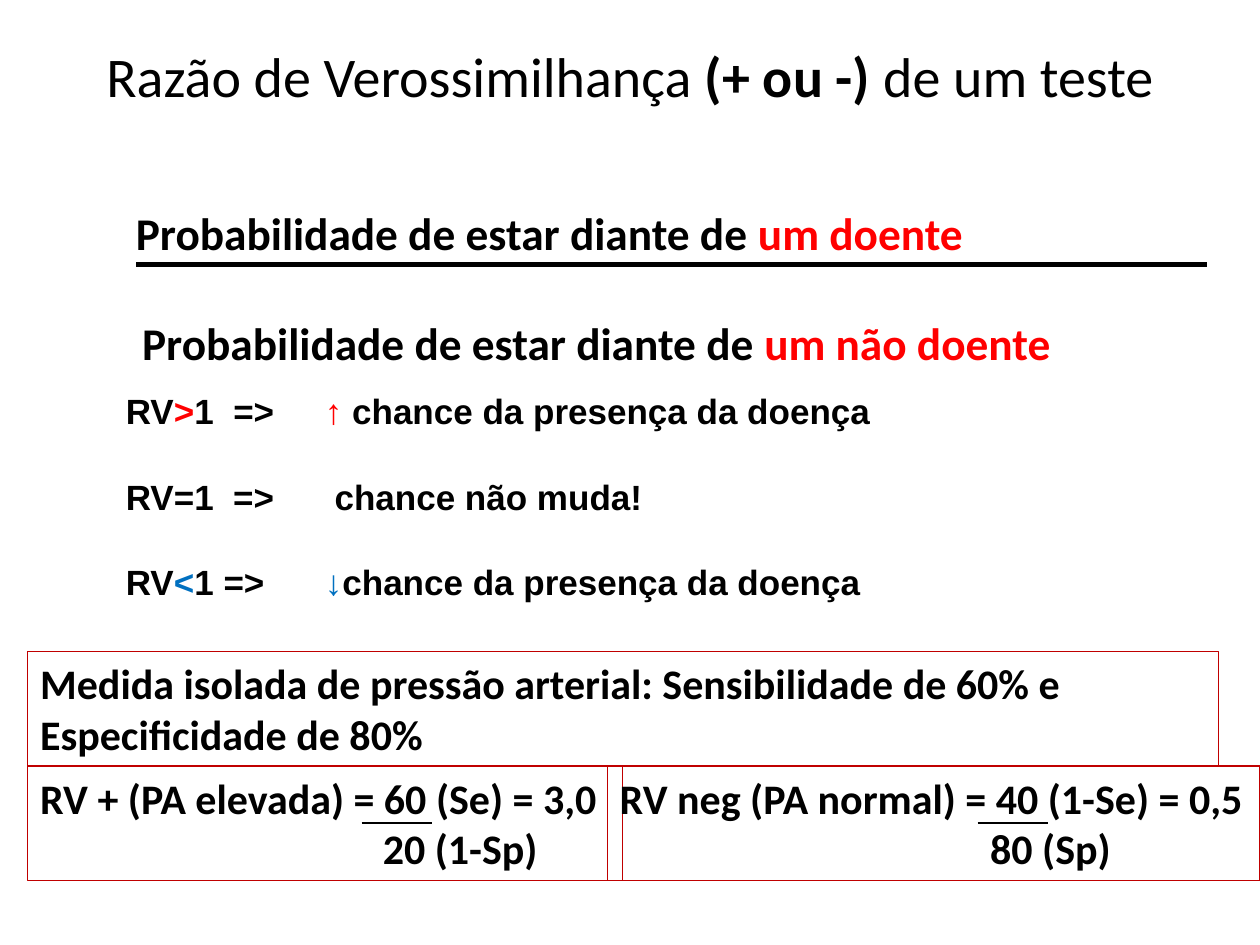
from lxml.etree import SubElement
from pptx import Presentation
from pptx.dml.color import RGBColor
from pptx.enum.shapes import MSO_CONNECTOR, MSO_SHAPE
from pptx.enum.text import MSO_ANCHOR, PP_ALIGN
from pptx.oxml.ns import qn
from pptx.util import Inches, Pt

BLACK = RGBColor(0x00, 0x00, 0x00)
RED = RGBColor(0xFF, 0x00, 0x00)
BLUE = RGBColor(0x00, 0x70, 0xC0)
DARK_RED = RGBColor(0xC0, 0x00, 0x00)

RATIO = {"name": "Calibri", "size": Pt(25.9), "bold": True}
RULE = {"name": "Arial", "size": Pt(20), "bold": True}
EXAMPLE = {"name": "Calibri", "size": Pt(24), "bold": True}


def add_runs(paragraph, runs, font_format):
    """Add (text, colour) pairs that share one font format."""
    for text, colour in runs:
        run = paragraph.add_run()
        run.text = text
        for attribute, value in font_format.items():
            setattr(run.font, attribute, value)
        run.font.color.rgb = colour


def add_text(slide, left, top, width, height):
    frame = slide.shapes.add_textbox(
        Inches(left), Inches(top), Inches(width), Inches(height)).text_frame
    frame.word_wrap = True
    return frame


def add_rule_line(slide, left, y, width, weight):
    line = slide.shapes.add_connector(
        MSO_CONNECTOR.STRAIGHT, Inches(left), Inches(y), Inches(left + width), Inches(y))
    line.line.color.rgb = BLACK
    line.line.width = Pt(weight)
    SubElement(line._element.spPr, qn("a:effectLst"))


def add_framed_box(slide, left, top, width, height):
    box = slide.shapes.add_shape(
        MSO_SHAPE.RECTANGLE, Inches(left), Inches(top), Inches(width), Inches(height))
    box.shadow.inherit = False
    box.fill.background()
    box.line.color.rgb = DARK_RED
    box.line.width = Pt(0.75)
    frame = box.text_frame
    frame.word_wrap = True
    frame.vertical_anchor = MSO_ANCHOR.TOP
    frame.paragraphs[0].alignment = PP_ALIGN.LEFT
    return frame


def place_title(slide, left, top, width, height):
    title = slide.shapes.title
    title.left, title.top = Inches(left), Inches(top)
    title.width, title.height = Inches(width), Inches(height)
    title.text_frame.vertical_anchor = MSO_ANCHOR.MIDDLE
    paragraph = title.text_frame.paragraphs[0]
    paragraph.alignment = PP_ALIGN.CENTER
    for text, bold in (("Razão de Verossimilhança ", False),
                       ("(+ ou -) ", True), ("de um teste", False)):
        add_runs(paragraph, [(text, BLACK)],
                 {"name": "Calibri", "size": Pt(32), "bold": bold})


def add_likelihood_ratio(slide, left, top, width):
    """Numerator and denominator in words, with the fraction bar between."""
    terms = ((-0.1, 0, "um doente"), (-0.05, 0.87, "um não doente"))
    for shift, drop, condition in terms:
        frame = add_text(slide, left + shift, top + drop, width, 0.54)
        add_runs(frame.paragraphs[0],
                 [("Probabilidade de estar diante de ", BLACK), (condition, RED)], RATIO)
    add_rule_line(slide, left, top + 0.52, width, 3)


def add_interpretation(slide, left, top, width, height):
    frame = add_text(slide, left, top, width, height)
    outcomes = (
        (">", "1  =>", "↑ ", "chance da presença da doença", RED),
        ("=", "1  =>", "", " chance não muda!", BLACK),
        ("<", "1 =>", "↓", "chance da presença da doença", BLUE),
    )
    for index, (sign, unit, arrow, meaning, colour) in enumerate(outcomes):
        paragraph = frame.paragraphs[0] if index == 0 else frame.add_paragraph()
        paragraph.space_after = Pt(25)
        tabs = SubElement(paragraph._p.get_or_add_pPr(), qn("a:tabLst"))
        SubElement(tabs, qn("a:tab"), pos=str(Inches(1.58)), algn="l")
        runs = [("RV", BLACK), (sign, colour), (unit + "\t", BLACK),
                (arrow, colour), (meaning, BLACK)]
        add_runs(paragraph, [run for run in runs if run[0]], RULE)


def add_worked_ratio(slide, left, top, width, height, numerator, denominator,
                     bar_offset, denominator_indent):
    frame = add_framed_box(slide, left, top, width, height)
    add_runs(frame.paragraphs[0], [(numerator, BLACK)], EXAMPLE)
    below = frame.add_paragraph()
    below.alignment = PP_ALIGN.LEFT
    below._p.get_or_add_pPr().set("marL", str(Inches(denominator_indent)))
    add_runs(below, [(denominator, BLACK)], EXAMPLE)
    add_rule_line(slide, left + bar_offset, top + height / 2, 0.56, 1)


def add_example(slide, left, top, width, row_height):
    heading = add_framed_box(slide, left, top, width, row_height)
    add_runs(heading.paragraphs[0],
             [("Medida isolada de pressão arterial: Sensibilidade de 60% "
               "e\u00a0Especificidade de 80%".replace("\u00a0", " "), BLACK)], EXAMPLE)
    ratios_top = top + row_height
    add_worked_ratio(slide, left, ratios_top, 4.72, row_height,
                     "RV + (PA elevada) = 60 (Se) = 3,0", "20 (1-Sp)", 2.65, 2.72)
    add_worked_ratio(slide, left + 4.6, ratios_top, 5.18, row_height,
                     "RV neg (PA normal) = 40 (1-Se) = 0,5", "80 (Sp)", 2.94, 2.94)


def main():
    presentation = Presentation()
    presentation.slide_width, presentation.slide_height = Inches(10), Inches(7.5)
    slide = presentation.slides.add_slide(presentation.slide_layouts[5])
    place_title(slide, 0, 0.13, 10, 0.93)
    add_likelihood_ratio(slide, 1.08, 1.58, 8.5)
    add_interpretation(slide, 0.9, 3.04, 8.35, 1.78)
    add_example(slide, 0.22, 5.17, 9.45, 0.91)
    presentation.save("out.pptx")


if __name__ == "__main__":
    main()
